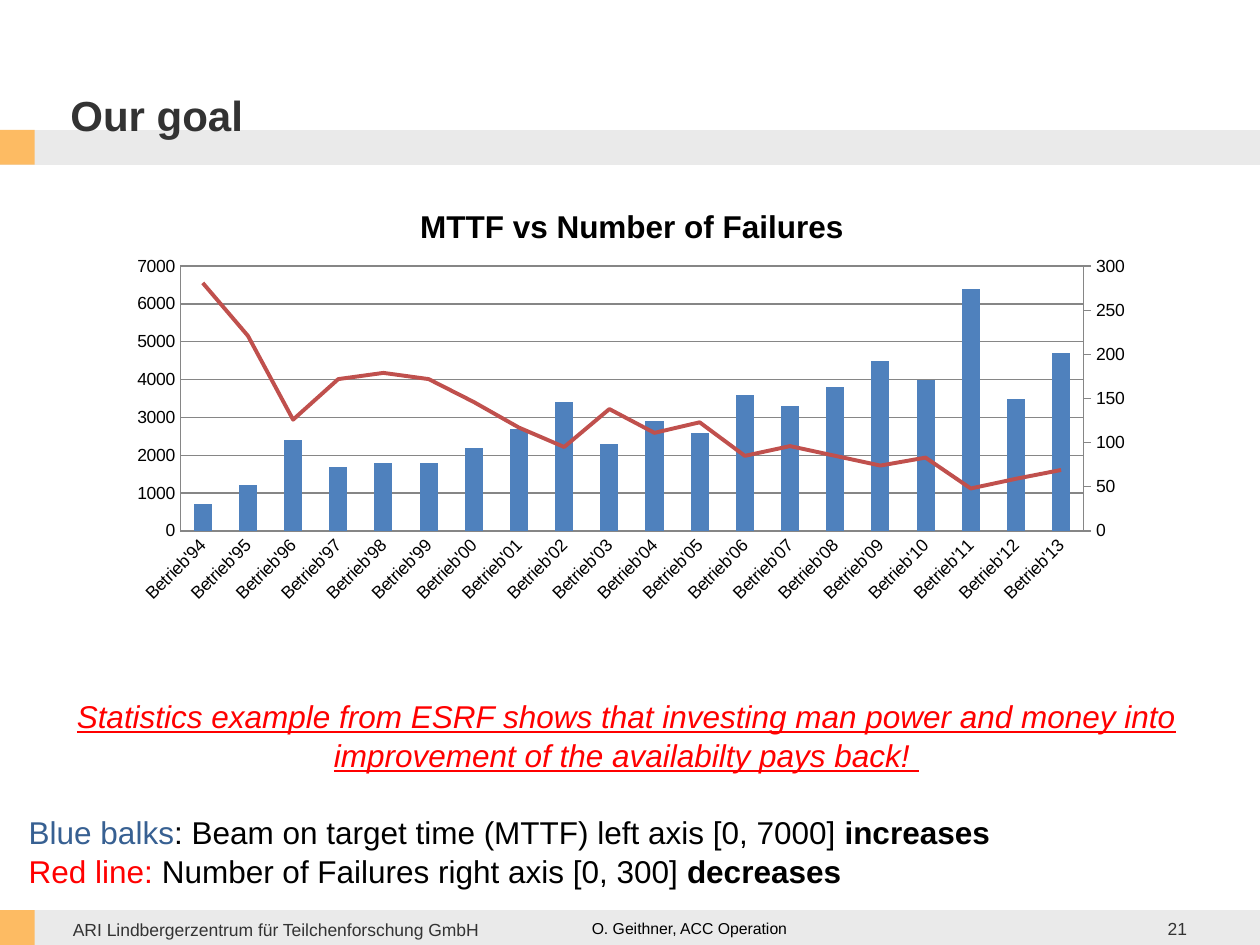
from copy import deepcopy
from dataclasses import dataclass

from lxml.etree import SubElement
from pptx import Presentation
from pptx.chart.data import CategoryChartData
from pptx.dml.color import RGBColor
from pptx.enum.chart import XL_CHART_TYPE, XL_MARKER_STYLE, XL_TICK_MARK
from pptx.enum.shapes import MSO_CONNECTOR, MSO_SHAPE
from pptx.enum.text import MSO_ANCHOR, PP_ALIGN
from pptx.oxml import parse_xml
from pptx.oxml.ns import nsdecls, qn
from pptx.util import Cm, Pt


@dataclass(frozen=True)
class Theme:
    """Hold the colours, font and type sizes of the slide."""
    font: str = "Arial"
    band: str = "EAEAEA"
    mark: str = "FDBB63"
    dark: str = "333333"
    black: str = "000000"
    red: str = "FF0000"
    blue: str = "376092"
    bar: str = "4F81BD"
    line: str = "C0504D"
    grid: str = "868686"
    head: float = 24
    body: float = 18
    small: float = 10
    tiny: float = 9


THEME = Theme()
HOURS = (700, 1200, 2400, 1700, 1800, 1800, 2200, 2700, 3400, 2300,
         2900, 2600, 3600, 3300, 3800, 4500, 4000, 6400, 3500, 4700)
FAULTS = (281, 221, 126, 172, 179, 172, 146, 117, 95, 138,
          111, 123, 85, 96, 85, 74, 83, 48, 59, 69)


def tint(code):
    """Turn a hex code into a colour."""
    return RGBColor.from_string(code)


def style(font, size, color=THEME.black, bold=False, slant=False, under=False):
    """Set the look of a font."""
    font.name, font.size, font.color.rgb = THEME.font, Pt(size), tint(color)
    font.bold, font.italic, font.underline = bold, slant, under


def add_frame(slide, area, anchor=MSO_ANCHOR.MIDDLE):
    """Add a wrapped text box and return its frame."""
    frame = slide.shapes.add_textbox(*map(Cm, area)).text_frame
    frame.word_wrap, frame.vertical_anchor = True, anchor
    return frame


def add_text(para, text, size=THEME.body, align=PP_ALIGN.LEFT, **look):
    """Add a run of text with its format to a paragraph."""
    para.alignment = align
    run = para.add_run()
    run.text = text
    style(run.font, size, **look)


def add_block(slide, area, color):
    """Add a plain filled rectangle."""
    block = slide.shapes.add_shape(MSO_SHAPE.RECTANGLE, *map(Cm, area))
    block.shadow.inherit = False
    block.fill.solid()
    block.fill.fore_color.rgb = tint(color)
    block.line.fill.background()


def add_rule(slide, y, width):
    """Add a thick line across the slide."""
    rule = slide.shapes.add_connector(MSO_CONNECTOR.STRAIGHT, 0, Cm(y), Cm(25.4), Cm(y))
    rule.line.color.rgb, rule.line.width = tint(THEME.band), Pt(width)
    SubElement(rule._element.spPr, qn("a:effectLst"))


def set_axis(axis, top=None, step=None):
    """Style an axis and set its scale."""
    style(axis.tick_labels.font, THEME.small)
    axis.format.line.color.rgb = tint(THEME.grid)
    axis.major_tick_mark = axis.minor_tick_mark = XL_TICK_MARK.NONE
    if top:
        axis.minimum_scale, axis.maximum_scale, axis.major_unit = 0, top, step
        axis.major_gridlines.format.line.color.rgb = tint(THEME.grid)


def put(node, **values):
    """Set the val attribute of named chart nodes."""
    for name, value in values.items():
        next(node.iter(qn(f"c:{name}"))).set("val", value)


def drop(node, name):
    """Remove the named children of a chart node."""
    for child in node.findall(qn(f"c:{name}")):
        node.remove(child)


def split_line(chart):
    """Move the second series to a line on a right axis."""
    area = chart._chartSpace.chart.plotArea
    bars = area.find(qn("c:barChart"))
    row = bars.findall(qn("c:ser"))[1]
    drop(row, "invertIfNegative")
    plot = parse_xml(f'<c:lineChart {nsdecls("c")}><c:grouping val="standard"/>'
                     '<c:varyColors val="0"/><c:marker val="1"/>'
                     '<c:axId val="501"/><c:axId val="502"/></c:lineChart>')
    plot.insert(2, row)
    bars.addnext(plot)
    left = area.find(qn("c:valAx"))
    right = deepcopy(left)
    drop(right, "majorGridlines")
    put(right, axId="502", crossAx="501", axPos="r", crosses="max",
        majorTickMark="out", max="300", majorUnit="50")
    base = deepcopy(area.find(qn("c:catAx")))
    put(base, axId="501", crossAx="502", delete="1")
    left.addnext(right)
    right.addnext(base)


def set_plot(chart, x, y, w, h):
    """Place the inner plot area by shares of the chart."""
    area = chart._chartSpace.chart.plotArea
    drop(area, "layout")
    parts = "".join(f'<c:{key} val="{value}"/>' for key, value in
                    dict(x=x, y=y, w=w, h=h).items())
    area.insert(0, parse_xml(
        f'<c:layout {nsdecls("c")}><c:manualLayout><c:layoutTarget val="inner"/>'
        f'<c:xMode val="edge"/><c:yMode val="edge"/>{parts}</c:manualLayout></c:layout>'))


def add_graph(slide, area):
    """Add the chart of bars and line."""
    data = CategoryChartData()
    data.categories = [f"Betrieb'{year % 100:02d}" for year in range(1994, 2014)]
    data.add_series("Series 1", HOURS)
    data.add_series("Series 2", FAULTS)
    chart = slide.shapes.add_chart(
        XL_CHART_TYPE.COLUMN_CLUSTERED, *map(Cm, area), data).chart
    style(chart.font, THEME.small)
    chart.has_legend, chart.has_title = False, True
    add_text(chart.chart_title.text_frame.paragraphs[0],
             "MTTF vs Number of Failures", align=PP_ALIGN.CENTER, bold=True)
    chart.chart_title.include_in_layout = False
    set_axis(chart.category_axis)
    chart.category_axis._element.txPr.bodyPr.set("rot", "-2700000")
    set_axis(chart.value_axis, 7000, 1000)
    split_line(chart)
    set_plot(chart, 0.06, 0.19, 0.88, 0.62)
    bars, trend = chart.plots
    bars.gap_width, bars.vary_by_categories = 150, False
    fill = bars.series[0].format.fill
    fill.solid()
    fill.fore_color.rgb = tint(THEME.bar)
    curve = trend.series[0]
    curve.smooth, curve.marker.style = False, XL_MARKER_STYLE.NONE
    curve.format.line.color.rgb, curve.format.line.width = tint(THEME.line), Pt(2.25)


def add_notes(slide, area):
    """Add the claim and the key to the chart."""
    claim = dict(align=PP_ALIGN.CENTER, color=THEME.red, slant=True, under=True)
    rows = (
        (0, [("Statistics example from ESRF shows that investing man power and money into",
              claim)]),
        (1, [("improvement of the availabilty pays back! ", claim)]),
        (22, [("Blue balks", dict(color=THEME.blue)),
              (": Beam on target time (MTTF) left axis [0, 7000] ", {}),
              ("increases", dict(bold=True))]),
        (1, [("Red line: ", dict(color=THEME.red)),
             ("Number of Failures right axis [0, 300] ", {}),
             ("decreases", dict(bold=True))]),
    )
    frame = add_frame(slide, area, MSO_ANCHOR.TOP)
    for spot, (gap, runs) in enumerate(rows):
        para = frame.add_paragraph() if spot else frame.paragraphs[0]
        para.space_before = Pt(gap)
        for text, look in runs:
            add_text(para, text, **look)


def main():
    """Build the slide and save it."""
    deck = Presentation()
    deck.slide_width, deck.slide_height = Cm(25.4), Cm(19.05)
    slide = deck.slides.add_slide(deck.slide_layouts[6])
    add_block(slide, (0, 18.35, 25.4, 0.7), THEME.band)
    add_rule(slide, 2.97, 20)
    for y in (2.62, 18.35):
        add_block(slide, (0, y, 0.7, 0.7), THEME.mark)
    title = add_frame(slide, (1.17, 0.76, 17.35, 2.18), MSO_ANCHOR.BOTTOM)
    add_text(title.paragraphs[0], "Our goal", THEME.head, color=THEME.dark, bold=True)
    add_graph(slide, (2.39, 3.73, 20.7, 8.61))
    add_notes(slide, (0.33, 13.92, 24.59, 4.88))
    gray = dict(size=THEME.small, color=THEME.dark)
    feet = (
        ((1.22, 18.39, 10.49, 0.69), "ARI Lindbergerzentrum für Teilchenforschung GmbH", gray),
        ((11.68, 18.21, 8.05, 0.99), "O. Geithner, ACC Operation", dict(size=THEME.tiny)),
        ((22.12, 18.21, 2.06, 1.02), "21", dict(gray, align=PP_ALIGN.RIGHT)),
    )
    for area, text, look in feet:
        add_text(add_frame(slide, area).paragraphs[0], text, **look)
    deck.save("out.pptx")


if __name__ == "__main__":
    main()
